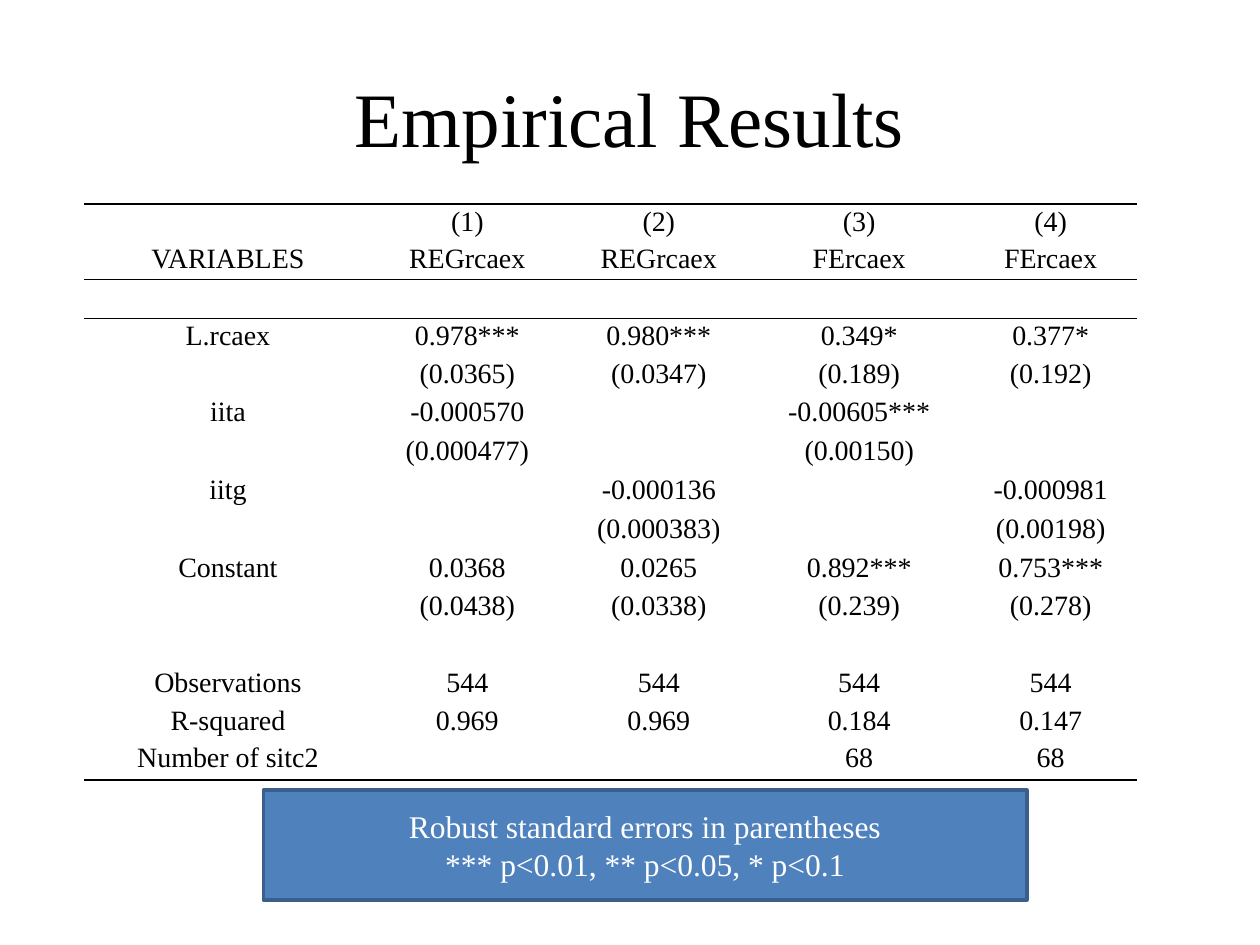
from lxml import etree
from pptx import Presentation
from pptx.dml.color import RGBColor
from pptx.enum import shapes, text
from pptx.oxml import ns
from pptx.util import Cm, Pt

BLACK = RGBColor(0x00, 0x00, 0x00)
WHITE = RGBColor(0xFF, 0xFF, 0xFF)
BLUE = RGBColor(0x4F, 0x81, 0xBD)
DARK_BLUE = RGBColor(0x3A, 0x5F, 0x8C)
FONT = "Times New Roman"
NO_STYLE = "{2D5ABB26-0587-4C30-8999-92F81FD0307C}"

COL_WIDTHS = [5.79, 3.86, 3.86, 4.22, 3.5]
ROW_HEIGHT, TALL_HEIGHT = 0.76, 0.79
TALL_ROWS = {2, 5, 6, 7, 8, 11, 14}
RULES = {0: "lnT", 1: "lnB", 2: "lnT", 14: "lnB"}
RESULTS = [
    ["", "(1)", "(2)", "(3)", "(4)"],
    ["VARIABLES", "REGrcaex", "REGrcaex", "FErcaex", "FErcaex"],
    ["", "", "", "", ""],
    ["L.rcaex", "0.978***", "0.980***", "0.349*", "0.377*"],
    ["", "(0.0365)", "(0.0347)", "(0.189)", "(0.192)"],
    ["iita", "-0.000570", "", "-0.00605***", ""],
    ["", "(0.000477)", "", "(0.00150)", ""],
    ["iitg", "", "-0.000136", "", "-0.000981"],
    ["", "", "(0.000383)", "", "(0.00198)"],
    ["Constant", "0.0368", "0.0265", "0.892***", "0.753***"],
    ["", "(0.0438)", "(0.0338)", "(0.239)", "(0.278)"],
    ["", "", "", "", ""],
    ["Observations", "544", "544", "544", "544"],
    ["R-squared", "0.969", "0.969", "0.184", "0.147"],
    ["Number of sitc2", "", "", "68", "68"],
]


def format_text(tf, size, color, spacing=None):
    """Centre every paragraph and style its runs."""
    for p in tf.paragraphs:
        p.alignment = text.PP_ALIGN.CENTER
        p.line_spacing = spacing
        for r in p.runs:
            r.font.size = Pt(size)
            r.font.name = FONT
            r.font.color.rgb = color


def add_title(s, title):
    """Add the slide title."""
    sp = s.shapes.add_textbox(Cm(1.27), Cm(0.76), Cm(22.86), Cm(3.18))
    tf = sp.text_frame
    tf.word_wrap = True
    tf.vertical_anchor = text.MSO_ANCHOR.MIDDLE
    tf.text = title
    format_text(tf, 44, BLACK)


def add_rule(cell, edge):
    """Draw a black one-point line on one edge of a cell."""
    ln = etree.Element(ns.qn(f"a:{edge}"), w=str(Pt(1)))
    fill = etree.SubElement(ln, ns.qn("a:solidFill"))
    etree.SubElement(fill, ns.qn("a:srgbClr"), val=str(BLACK))
    cell._tc.get_or_add_tcPr().insert(0, ln)


def fill_cell(cell, value):
    """Write one value into a plain table cell."""
    cell.fill.background()
    cell.margin_left = cell.margin_right = Cm(0.13)
    cell.margin_top = cell.margin_bottom = 0
    tf = cell.text_frame
    if value:
        tf.text = value
    else:
        etree.SubElement(tf.paragraphs[0]._p, ns.qn("a:endParaRPr"), sz="1600")
    format_text(tf, 16, BLACK, 1.07)


def add_results(s):
    """Add the regression table with its horizontal rules."""
    heights = [TALL_HEIGHT if i in TALL_ROWS else ROW_HEIGHT
               for i in range(len(RESULTS))]
    frame = s.shapes.add_table(len(RESULTS), len(COL_WIDTHS), Cm(1.7), Cm(4.11),
                               Cm(sum(COL_WIDTHS)), Cm(sum(heights)))
    table = frame.table
    table.first_row = table.horz_banding = False
    table._tbl.tblPr.find(ns.qn("a:tableStyleId")).text = NO_STYLE
    for column, width in zip(table.columns, COL_WIDTHS):
        column.width = Cm(width)
    for i, values in enumerate(RESULTS):
        table.rows[i].height = Cm(heights[i])
        for j, value in enumerate(values):
            cell = table.cell(i, j)
            fill_cell(cell, value)
            if i in RULES:
                add_rule(cell, RULES[i])


def add_note(s, lines):
    """Add the blue box that explains the table."""
    sp = s.shapes.add_shape(shapes.MSO_SHAPE.RECTANGLE,
                            Cm(5.31), Cm(15.93), Cm(15.39), Cm(2.21))
    sp.shadow.inherit = False
    sp.fill.solid()
    sp.fill.fore_color.rgb = BLUE
    sp.line.color.rgb = DARK_BLUE
    sp.line.width = Pt(2)
    tf = sp.text_frame
    tf.word_wrap = True
    tf.vertical_anchor = text.MSO_ANCHOR.MIDDLE
    tf.text = "\n".join(lines)
    format_text(tf, 18, WHITE)


def main():
    """Build and save the slide."""
    prs = Presentation()
    prs.slide_width, prs.slide_height = Cm(25.4), Cm(19.05)
    s = prs.slides.add_slide(prs.slide_layouts[6])
    add_title(s, "Empirical Results")
    add_results(s)
    add_note(s, ["Robust standard errors in parentheses",
                 "*** p<0.01, ** p<0.05, * p<0.1"])
    prs.save("out.pptx")


if __name__ == "__main__":
    main()
